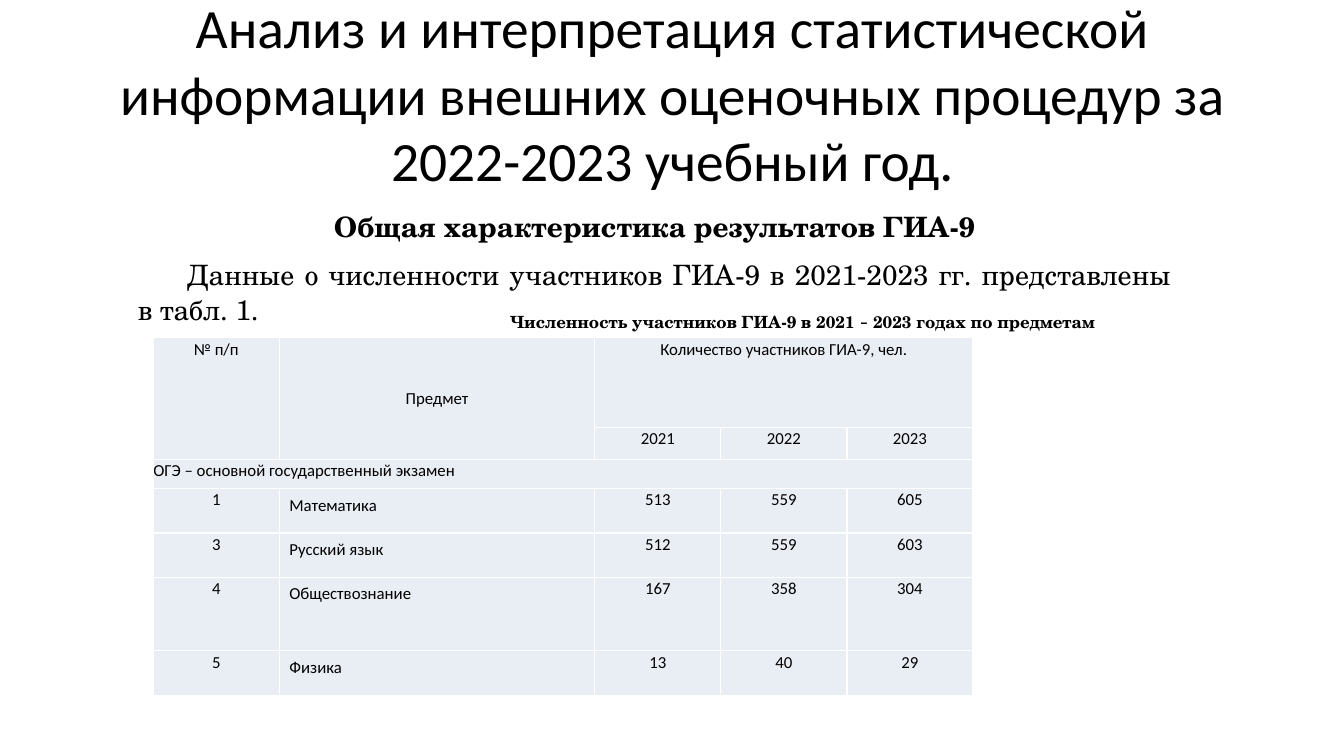
from dataclasses import dataclass

from lxml.etree import SubElement
from pptx import Presentation
from pptx.dml.color import RGBColor
from pptx.enum.text import MSO_ANCHOR, MSO_AUTO_SIZE, PP_ALIGN
from pptx.oxml.ns import qn
from pptx.util import Inches, Pt


@dataclass(frozen=True)
class Theme:
    sans: str = "Calibri"
    serif: str = "TeX Gyre Schola"
    text: RGBColor = RGBColor(0, 0, 0)
    cell: RGBColor = RGBColor(0xE9, 0xED, 0xF4)
    border: str = "FFFFFF"
    title_size: float = 39.6
    intro_size: float = 20
    small_size: float = 12
    line_spacing: float = 1.07


THEME = Theme()

COLUMNS = [1.25, 3.13, 1.25, 1.25, 1.25]
ROWS = [0.89, 0.3, 0.29, 0.44, 0.44, 0.73, 0.44]
CELLS = [
    ["№ п/п", "Предмет", "Количество участников ГИА-9, чел.", "", ""],
    ["", "", "2021", "2022", "2023"],
    ["ОГЭ – основной государственный экзамен", "", "", "", ""],
    ["1", "Математика", "513", "559", "605"],
    ["3", "Русский язык", "512", "559", "603"],
    ["4", "Обществознание", "167", "358", "304"],
    ["5", "Физика", "13", "40", "29"],
]
# First and last cell (row, column) of each merged area
MERGES = [((0, 0), (1, 0)), ((0, 1), (1, 1)), ((0, 2), (0, 4)), ((2, 0), (2, 4))]
SECTION_ROW, SUBJECT_COLUMN, HEADER_ROWS = 2, 1, 2


def style(p, font, size, align, bold=False):
    p.alignment = align
    p.font.name, p.font.size, p.font.bold = font, Pt(size), bold
    p.font.color.rgb = THEME.text


def add_box(s, box, anchor=MSO_ANCHOR.TOP):
    tf = s.shapes.add_textbox(*map(Inches, box)).text_frame
    tf.word_wrap = True
    tf.auto_size = MSO_AUTO_SIZE.NONE
    tf.vertical_anchor = anchor
    return tf


def add_title(s, box):
    p = add_box(s, box, MSO_ANCHOR.MIDDLE).paragraphs[0]
    p.text = ("Анализ и интерпретация статистической информации "
              "внешних оценочных процедур за 2022-2023 учебный год.")
    style(p, THEME.sans, THEME.title_size, PP_ALIGN.CENTER)


def add_intro(s, box):
    tf = add_box(s, box)
    heading, body = tf.paragraphs[0], tf.add_paragraph()
    heading.text = "Общая характеристика результатов ГИА-9"
    body.text = "Данные о численности участников ГИА-9 в 2021-2023 гг. представлены в табл. 1."
    style(heading, THEME.serif, THEME.intro_size, PP_ALIGN.CENTER, bold=True)
    style(body, THEME.serif, THEME.intro_size, PP_ALIGN.JUSTIFY)
    for p in tf.paragraphs:
        p.line_spacing = THEME.line_spacing
        p.space_after = Pt(8)
    # First-line indent
    body._p.get_or_add_pPr().set("indent", str(Inches(0.49)))


def add_caption(s, box):
    p = add_box(s, box, MSO_ANCHOR.MIDDLE).paragraphs[0]
    style(p, THEME.serif, THEME.small_size, PP_ALIGN.CENTER, bold=True)
    for text, font in [("Численность участников ГИА-9 в 2021 ", THEME.serif),
                       ("–", THEME.sans),
                       (" 2023 годах по предметам", THEME.serif)]:
        r = p.add_run()
        r.text = text
        r.font.name = font


def set_borders(cell):
    tcPr = cell._tc.get_or_add_tcPr()
    for side in ("a:lnL", "a:lnR", "a:lnT", "a:lnB"):
        ln = SubElement(tcPr, qn(side), w=str(Pt(1)))
        SubElement(SubElement(ln, qn("a:solidFill")), qn("a:srgbClr"), val=THEME.border)


def format_cell(cell, row, column):
    set_borders(cell)
    cell.fill.solid()
    cell.fill.fore_color.rgb = THEME.cell
    align = PP_ALIGN.CENTER
    if row == SECTION_ROW:
        align = PP_ALIGN.LEFT
    elif column == SUBJECT_COLUMN and row >= HEADER_ROWS:
        align = PP_ALIGN.JUSTIFY
    # Only the subject column keeps its margins
    if column != SUBJECT_COLUMN:
        cell.margin_left = cell.margin_right = cell.margin_top = cell.margin_bottom = 0
    elif row < HEADER_ROWS:
        cell.vertical_anchor = MSO_ANCHOR.MIDDLE
    p = cell.text_frame.paragraphs[0]
    style(p, THEME.sans, THEME.small_size, align)
    p.line_spacing = THEME.line_spacing


def add_participants_table(s, left, top):
    table = s.shapes.add_table(len(ROWS), len(COLUMNS), Inches(left), Inches(top),
                               Inches(sum(COLUMNS)), Inches(sum(ROWS))).table
    table.first_row = table.horz_banding = False
    for column, width in zip(table.columns, COLUMNS):
        column.width = Inches(width)
    for row, height in zip(table.rows, ROWS):
        row.height = Inches(height)
    for i, texts in enumerate(CELLS):
        for j, text in enumerate(texts):
            cell = table.cell(i, j)
            cell.text = text
            format_cell(cell, i, j)
    for first, last in MERGES:
        table.cell(*first).merge(table.cell(*last))


def main():
    prs = Presentation()
    prs.slide_width, prs.slide_height = Inches(13.33), Inches(7.5)
    s = prs.slides.add_slide(prs.slide_layouts[6])
    add_title(s, (0.67, 0.3, 12, 1.25))
    add_intro(s, (1.27, 2.01, 10.44, 0.93))
    add_participants_table(s, 1.52, 3.35)
    add_caption(s, (4.67, 3.04, 6.58, 0.3))
    prs.save("out.pptx")


if __name__ == "__main__":
    main()
